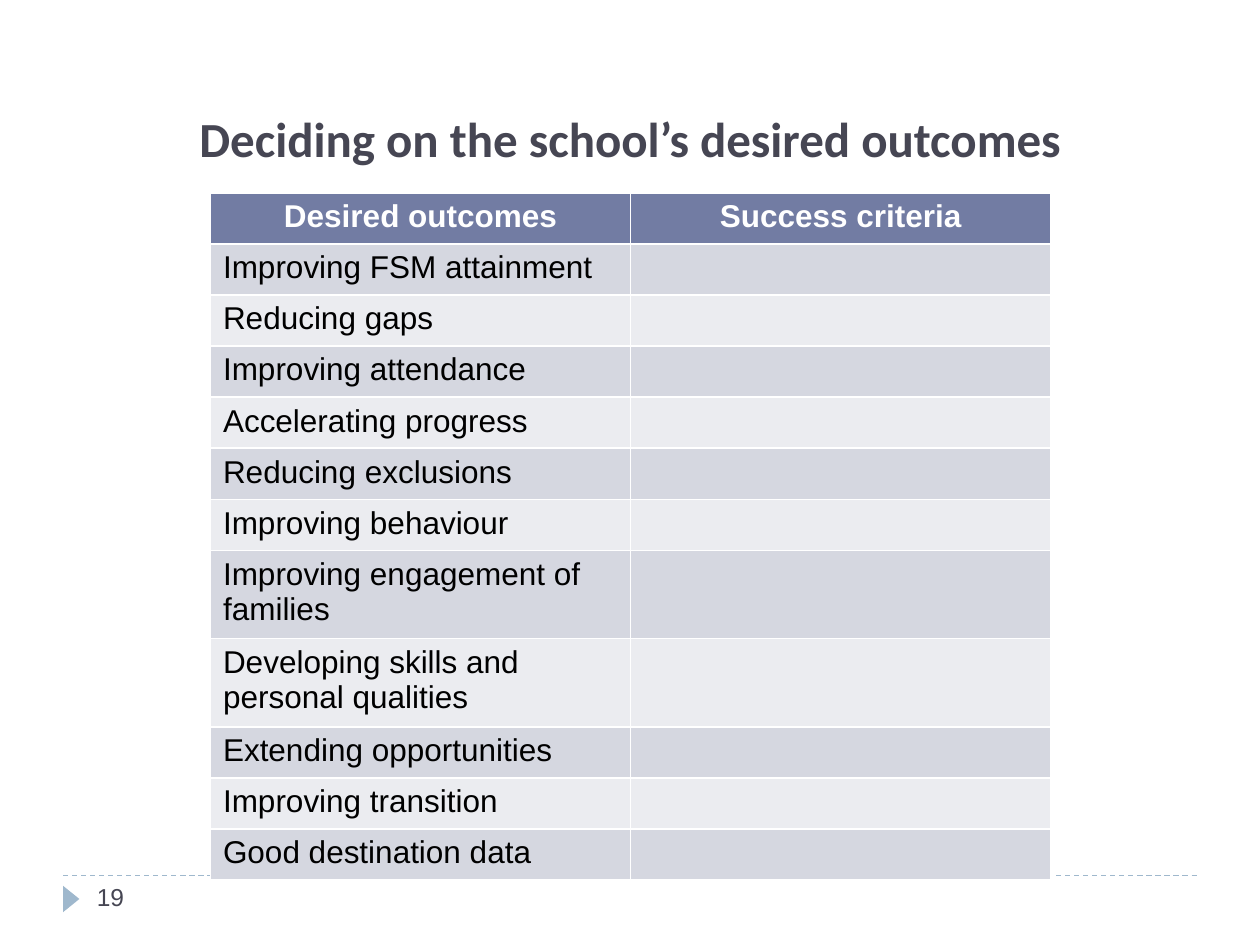
from dataclasses import dataclass

from pptx import Presentation
from pptx.dml.color import RGBColor as RGB
from pptx.enum.dml import MSO_LINE as Dash
from pptx.enum.shapes import MSO_CONNECTOR as Link, MSO_SHAPE as Kind
from pptx.enum.text import MSO_ANCHOR as Anchor, MSO_AUTO_SIZE as Fit, PP_ALIGN as Align
from pptx.oxml.ns import qn
from pptx.util import Inches, Pt


@dataclass(frozen=True)
class Theme:
    ink: str = "464653"
    body: str = "000000"
    white: str = "FFFFFF"
    head: str = "727CA3"
    bands: tuple = ("D5D7E0", "EBECF0")
    accent: str = "9FB8CD"
    title_font: str = "Calibri"
    font: str = "Arial"
    title_size: int = 28
    table_size: int = 18
    page_size: int = 14


OUTCOMES = (
    "Improving FSM attainment",
    "Reducing gaps",
    "Improving attendance",
    "Accelerating progress",
    "Reducing exclusions",
    "Improving behaviour",
    "Improving engagement of families",
    "Developing skills and personal qualities",
    "Extending opportunities",
    "Improving transition",
    "Good destination data",
)


def paint(fill, color):
    fill.solid()
    fill.fore_color.rgb = RGB.from_string(color)


class Page:
    def __init__(self, slide, theme):
        self.slide = slide
        self.shapes = slide.shapes
        self.theme = theme

    def style(self, para, size, color, bold=False, face=None, align=Align.LEFT):
        para.alignment = align
        font = para.font
        font.name = face or self.theme.font
        font.size = Pt(size)
        font.bold = bold
        font.color.rgb = RGB.from_string(color)

    def title(self, text, x, y, w, h):
        box = self.shapes.title
        box.left, box.top, box.width, box.height = map(Inches, (x, y, w, h))
        frame = box.text_frame
        frame.text = text
        frame.auto_size = Fit.NONE
        frame.vertical_anchor = Anchor.BOTTOM
        self.style(frame.paragraphs[0], self.theme.title_size, self.theme.ink,
                   True, self.theme.title_font, Align.CENTER)

    def label(self, text, x, y, w, h):
        frame = self.shapes.add_textbox(*map(Inches, (x, y, w, h))).text_frame
        frame.word_wrap = True
        frame.text = text
        self.style(frame.paragraphs[0], self.theme.page_size, self.theme.ink)

    def rule(self, x, y, end):
        line = self.shapes.add_connector(
            Link.STRAIGHT, Inches(x), Inches(y), Inches(end), Inches(y))
        line.line.color.rgb = RGB.from_string(self.theme.accent)
        line.line.width = Pt(0.75)
        line.line.dash_style = Dash.DASH
        props = line._element.spPr
        props.append(props.makeelement(qn("a:effectLst"), {}))

    def marker(self, x, y, w, h):
        mark = self.shapes.add_shape(Kind.ISOSCELES_TRIANGLE, *map(Inches, (x, y, w, h)))
        mark.rotation = 90
        mark.shadow.inherit = False
        paint(mark.fill, self.theme.accent)
        mark.line.fill.background()

    def table(self, rows, x, y, w, h):
        """Add a table with a header row and banded body rows."""
        theme = self.theme
        grid = self.shapes.add_table(
            len(rows), len(rows[0]), *map(Inches, (x, y, w, h))).table
        for i, row in enumerate(rows):
            head = i == 0
            back = theme.head if head else theme.bands[(i - 1) % 2]
            for j, text in enumerate(row):
                cell = grid.cell(i, j)
                cell.text = text
                paint(cell.fill, back)
                self.style(cell.text_frame.paragraphs[0], theme.table_size,
                           theme.white if head else theme.body, head,
                           align=Align.CENTER if head else Align.LEFT)


def main():
    deck = Presentation()
    deck.slide_width, deck.slide_height = Inches(10), Inches(7.5)
    page = Page(deck.slides.add_slide(deck.slide_layouts[5]), Theme())
    page.rule(0.5, 6.95, 9.5)
    page.marker(0.46, 7.07, 0.21, 0.13)
    page.title("Deciding on the school’s desired outcomes", 1.22, 0.91, 7.56, 0.47)
    page.label("19", 0.67, 6.95, 2.17, 0.4)
    rows = [("Desired outcomes", "Success criteria")]
    rows += [(name, "") for name in OUTCOMES]
    page.table(rows, 1.67, 1.53, 6.67, 4.87)
    deck.save("out.pptx")


if __name__ == "__main__":
    main()
